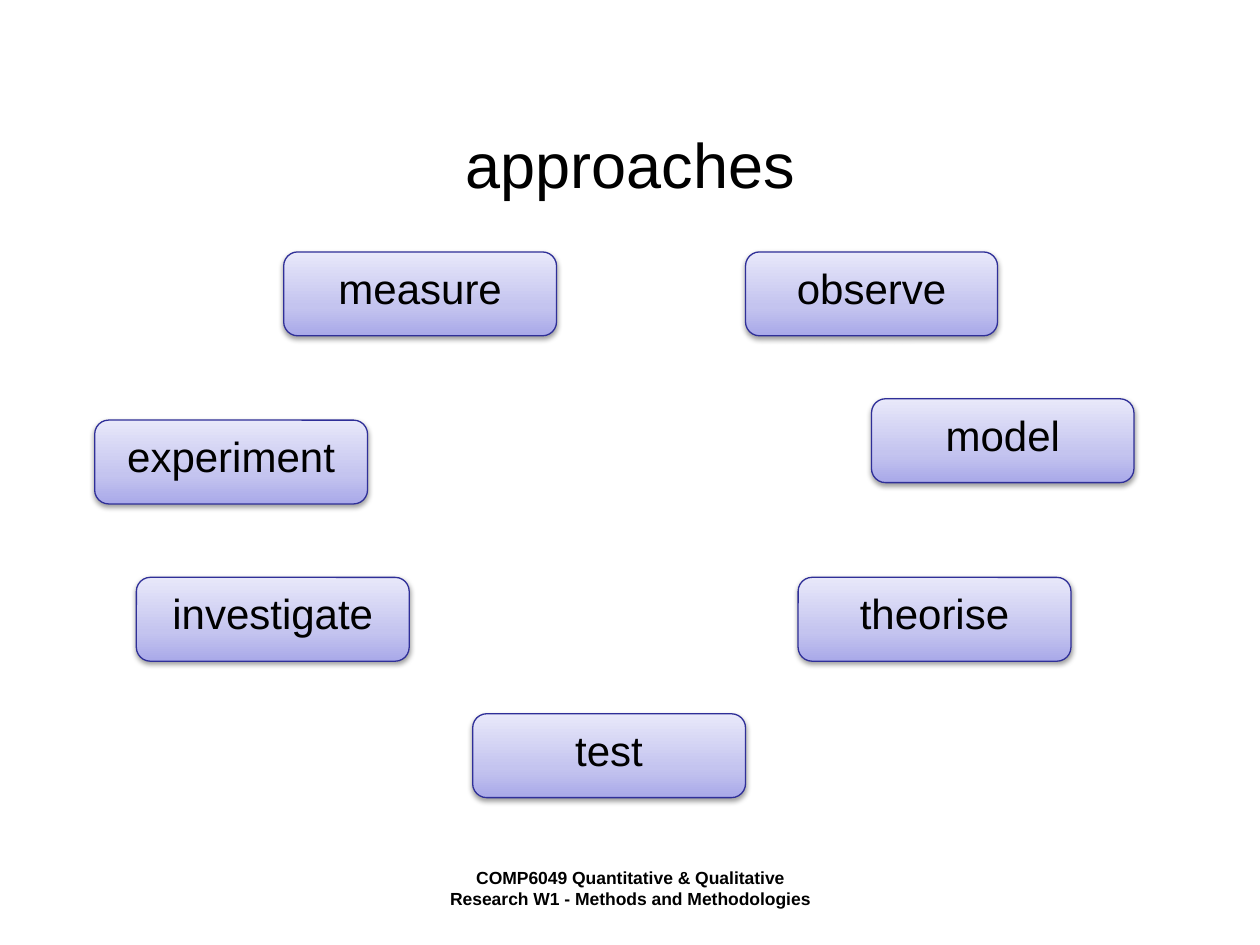
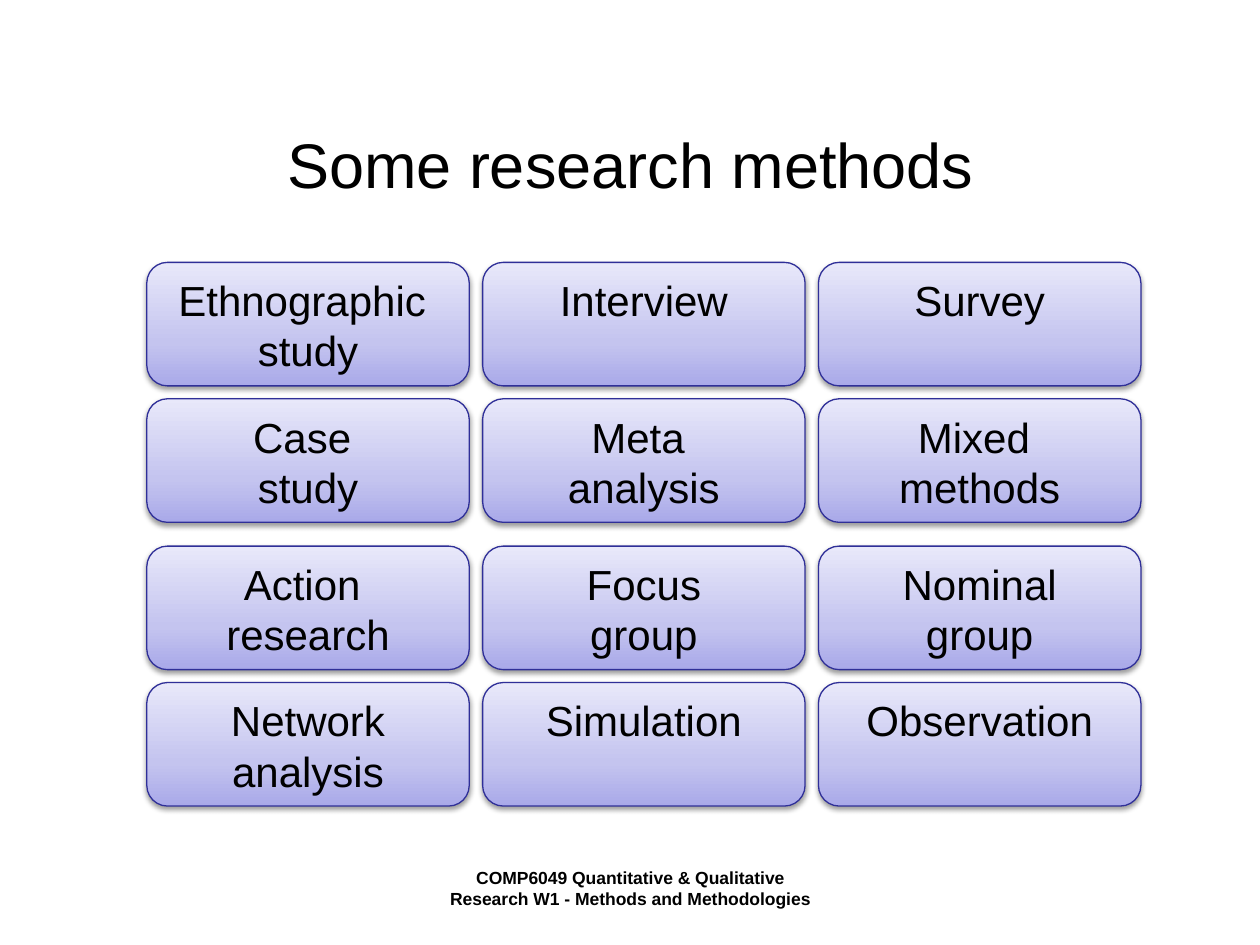
from copy import deepcopy

from lxml import etree
from pptx import Presentation
from pptx.dml.color import RGBColor
from pptx.enum import shapes, text
from pptx.oxml import ns
from pptx.util import Cm, Pt

FOOTER = "COMP6049 Quantitative & Qualitative Research W1 - Methods and Methodologies"

APPROACHES_TITLE = "approaches"
# label, left, top, width in cm
APPROACHES = [
    ("measure", 5.72, 5.08, 5.5),
    ("observe", 15.03, 5.08, 5.08),
    ("model", 17.57, 8.04, 5.29),
    ("theorise", 16.09, 11.64, 5.5),
    ("test", 9.53, 14.39, 5.5),
    ("investigate", 2.75, 11.64, 5.5),
    ("experiment", 1.91, 8.47, 5.5),
]
APPROACH_HEIGHT = 1.69

METHODS_TITLE = "Some research methods"
# \v breaks a line, \n starts a paragraph
METHODS = [
    ("Ethnographic \vstudy", "Interview", "Survey"),
    ("Case \vstudy", "Meta \vanalysis", "Mixed \vmethods"),
    ("Action \vresearch", "Focus\ngroup", "Nominal\ngroup"),
    ("Network\nanalysis", "Simulation", "Observation"),
]
GRID_LEFT, GRID_TOP = 2.96, 5.29
COLUMN_STEP, ROW_STEP = 6.77, 2.75
PAIR_GAP = 0.22
METHOD_WIDTH, METHOD_HEIGHT = 6.5, 2.49

FONT = "Arial"
INK = RGBColor(0x00, 0x00, 0x00)
BORDER = RGBColor(0x2F, 0x2F, 0x98)
GRADIENT = [
    (0, RGBColor(0xA9, 0xA9, 0xE9)),
    (0.35, RGBColor(0xC4, 0xC4, 0xEF)),
    (1, RGBColor(0xE8, 0xE8, 0xFA)),
]


def write(frame, content, size, bold=False, anchor=text.MSO_ANCHOR.TOP):
    frame.word_wrap = True
    frame.vertical_anchor = anchor
    frame.text = content
    for paragraph in frame.paragraphs:
        paragraph.alignment = text.PP_ALIGN.CENTER
        for run in paragraph.runs:
            run.font.name = FONT
            run.font.size = Pt(size)
            run.font.bold = bold
            run.font.color.rgb = INK


def fill_gradient(card):
    card.fill.gradient()
    card.fill.gradient_angle = 90
    stops = card._element.spPr.find(".//" + ns.qn("a:gsLst"))
    stops.append(deepcopy(stops[0]))
    for stop, (position, color) in zip(card.fill.gradient_stops, GRADIENT):
        stop.position = position
        stop.color.rgb = color


def add_soft_shadow(card):
    card.shadow.inherit = False
    effects = card._element.spPr.find(ns.qn("a:effectLst"))
    shadow = etree.SubElement(
        effects, ns.qn("a:outerShdw"), blurRad=str(Pt(3.1)), dist=str(Pt(1.6)),
        dir="5400000", rotWithShape="0")
    color = etree.SubElement(shadow, ns.qn("a:srgbClr"), val=str(INK))
    etree.SubElement(color, ns.qn("a:alpha"), val="38000")


def add_card(slide, label, left, top, width, height):
    card = slide.shapes.add_shape(
        shapes.MSO_SHAPE.FLOWCHART_ALTERNATE_PROCESS,
        Cm(left), Cm(top), Cm(width), Cm(height))
    fill_gradient(card)
    card.line.color.rgb = BORDER
    card.line.width = Pt(0.75)
    add_soft_shadow(card)
    write(card.text_frame, label, size=24)


def add_titled_slide(deck, heading):
    slide = deck.slides.add_slide(deck.slide_layouts.get_by_name("Title Only"))
    title = slide.shapes.title
    title.left, title.top, title.width, title.height = Cm(1.91), Cm(1.7), Cm(21.59), Cm(3.18)
    write(title.text_frame, heading, size=36, anchor=text.MSO_ANCHOR.MIDDLE)
    footer = slide.shapes.add_textbox(Cm(8.68), Cm(17.35), Cm(8.05), Cm(1.27))
    write(footer.text_frame, FOOTER, size=10, bold=True)
    return slide


def add_approaches(deck):
    slide = add_titled_slide(deck, APPROACHES_TITLE)
    for label, left, top, width in APPROACHES:
        add_card(slide, label, left, top, width, APPROACH_HEIGHT)


def add_methods(deck):
    """Lay the methods out in a grid, with a wider gap after each pair of rows."""
    slide = add_titled_slide(deck, METHODS_TITLE)
    for row, methods in enumerate(METHODS):
        top = GRID_TOP + row * ROW_STEP + row // 2 * PAIR_GAP
        for column, method in enumerate(methods):
            left = GRID_LEFT + column * COLUMN_STEP
            add_card(slide, method, left, top, METHOD_WIDTH, METHOD_HEIGHT)


def main():
    deck = Presentation()
    deck.slide_width, deck.slide_height = Cm(25.4), Cm(19.05)
    add_approaches(deck)
    add_methods(deck)
    deck.save("out.pptx")


if __name__ == "__main__":
    main()
